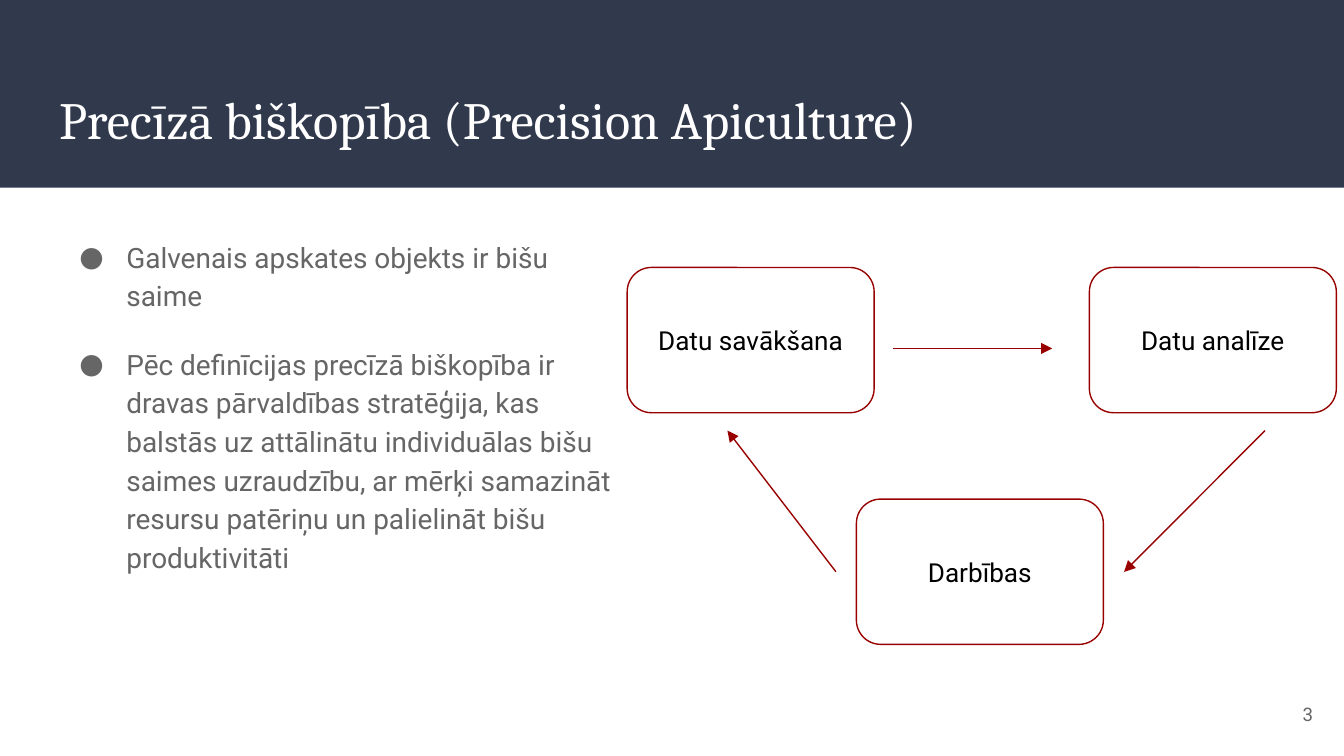
from lxml import etree
from pptx import Presentation, util as u
from pptx.dml.color import RGBColor
from pptx.enum import shapes, text
from pptx.oxml import ns

NAVY = RGBColor(0x31, 0x39, 0x4D)
WHITE = RGBColor(0xFF, 0xFF, 0xFF)
GREY = RGBColor(0x66, 0x66, 0x66)
BLACK = RGBColor(0, 0, 0)
RED = RGBColor(0x98, 0, 0)

TITLE = {"name": "Cambria", "size": u.Pt(28)}
BODY = {"name": "Roboto", "size": u.Pt(15)}
LABEL = {"name": "Roboto", "size": u.Pt(14)}
NUMBER = {"name": "Roboto", "size": u.Pt(10)}

STEP_SIZE = (132.3, 77.8)
STEPS = {
    "Datu savākšana": (336, 143.3),
    "Datu analīze": (583.6, 143.3),
    "Darbības": (458.8, 267.4),
}
ARROWS = [
    (478.5, 186.7, 563.7, 186.7),
    (677.7, 230.7, 602.2, 306.4),
    (447.8, 306.3, 389.7, 230.7),
]
BULLETS = [
    "Galvenais apskates objekts ir bišu saime",
    "Pēc definīcijas precīzā biškopība ir dravas pārvaldības stratēģija, kas "
    "balstās uz attālinātu individuālas bišu saimes uzraudzību, ar mērķi "
    "samazināt resursu patēriņu un palielināt bišu produktivitāti",
]


def apply(target, **values):
    for name, value in values.items():
        setattr(target, name, value)


def add_xml(parent, tag, **attributes):
    return etree.SubElement(parent, ns.qn(tag), attributes)


class SlideBuilder:
    """Draws styled elements on the current page, measured in points."""

    def __init__(self, page, line_color=RED, line_width=0.75):
        self.page = page
        self.line_color = line_color
        self.line_width = u.Pt(line_width)

    def place(self, box, left, top, width, height):
        apply(box, left=u.Pt(left), top=u.Pt(top), width=u.Pt(width), height=u.Pt(height))

    def frame(self, box, anchor):
        inset = u.Pt(7.2)
        apply(box.text_frame, word_wrap=True, auto_size=text.MSO_AUTO_SIZE.NONE,
              vertical_anchor=anchor, margin_left=inset, margin_right=inset,
              margin_top=inset, margin_bottom=inset)
        return box.text_frame

    def add_span(self, para, words, style, color, align):
        para.alignment = align
        span = para.add_run()
        span.text = words
        apply(span.font, **style)
        span.font.color.rgb = color

    def outline(self, item):
        item.line.color.rgb = self.line_color
        item.line.width = self.line_width

    def band(self, width, height, color):
        box = self.page.shapes.add_shape(shapes.MSO_SHAPE.RECTANGLE, 0, 0, u.Pt(width), u.Pt(height))
        box.shadow.inherit = False
        box.fill.solid()
        box.fill.fore_color.rgb = color
        box.line.fill.background()
        self.page.shapes.title.element.addprevious(box.element)

    def title(self, words, *bounds):
        box = self.page.shapes.title
        self.place(box, *bounds)
        frame = self.frame(box, text.MSO_ANCHOR.TOP)
        self.add_span(frame.paragraphs[0], words, TITLE, WHITE, text.PP_ALIGN.LEFT)

    def bullets(self, items, *bounds):
        box = self.page.placeholders[1]
        self.place(box, *bounds)
        frame = self.frame(box, text.MSO_ANCHOR.TOP)
        for index, words in enumerate(items):
            para = frame.add_paragraph() if index else frame.paragraphs[0]
            props = para._p.get_or_add_pPr()
            props.set("marL", str(u.Pt(36)))
            props.set("indent", str(u.Pt(-25.2)))
            add_xml(add_xml(props, "a:buClr"), "a:srgbClr", val=str(GREY))
            add_xml(props, "a:buFont", typeface="Roboto")
            add_xml(props, "a:buChar", char="●")
            apply(para, line_spacing=1.15, space_before=u.Pt(16 if index else 0))
            self.add_span(para, words, BODY, GREY, text.PP_ALIGN.LEFT)

    def number(self, words, *bounds):
        box = self.page.shapes.add_textbox(*map(u.Pt, bounds))
        frame = self.frame(box, text.MSO_ANCHOR.MIDDLE)
        self.add_span(frame.paragraphs[0], words, NUMBER, GREY, text.PP_ALIGN.RIGHT)

    def step(self, words, *bounds):
        box = self.page.shapes.add_shape(shapes.MSO_SHAPE.ROUNDED_RECTANGLE, *map(u.Pt, bounds))
        box.shadow.inherit = False
        box.fill.background()
        self.outline(box)
        frame = self.frame(box, text.MSO_ANCHOR.MIDDLE)
        self.add_span(frame.paragraphs[0], words, LABEL, BLACK, text.PP_ALIGN.CENTER)

    def arrow(self, *ends):
        link = self.page.shapes.add_connector(shapes.MSO_CONNECTOR.STRAIGHT, *map(u.Pt, ends))
        self.outline(link)
        add_xml(link.line._get_or_add_ln(), "a:tailEnd", type="triangle")
        add_xml(link._element.spPr, "a:effectLst")


def main():
    deck = Presentation()
    apply(deck, slide_width=u.Pt(720), slide_height=u.Pt(405))
    builder = SlideBuilder(deck.slides.add_slide(deck.slide_layouts[1]))
    builder.band(720, 100.6, NAVY)
    builder.title("Precīzā biškopība (Precision Apiculture)", 24.5, 39.6, 671, 49)
    builder.bullets(BULLETS, 24.5, 118.8, 314.6, 242)
    builder.number("3", 667.4, 367.2, 43.2, 31)
    for words, corner in STEPS.items():
        builder.step(words, *corner, *STEP_SIZE)
    for ends in ARROWS:
        builder.arrow(*ends)
    deck.save("out.pptx")


if __name__ == "__main__":
    main()
